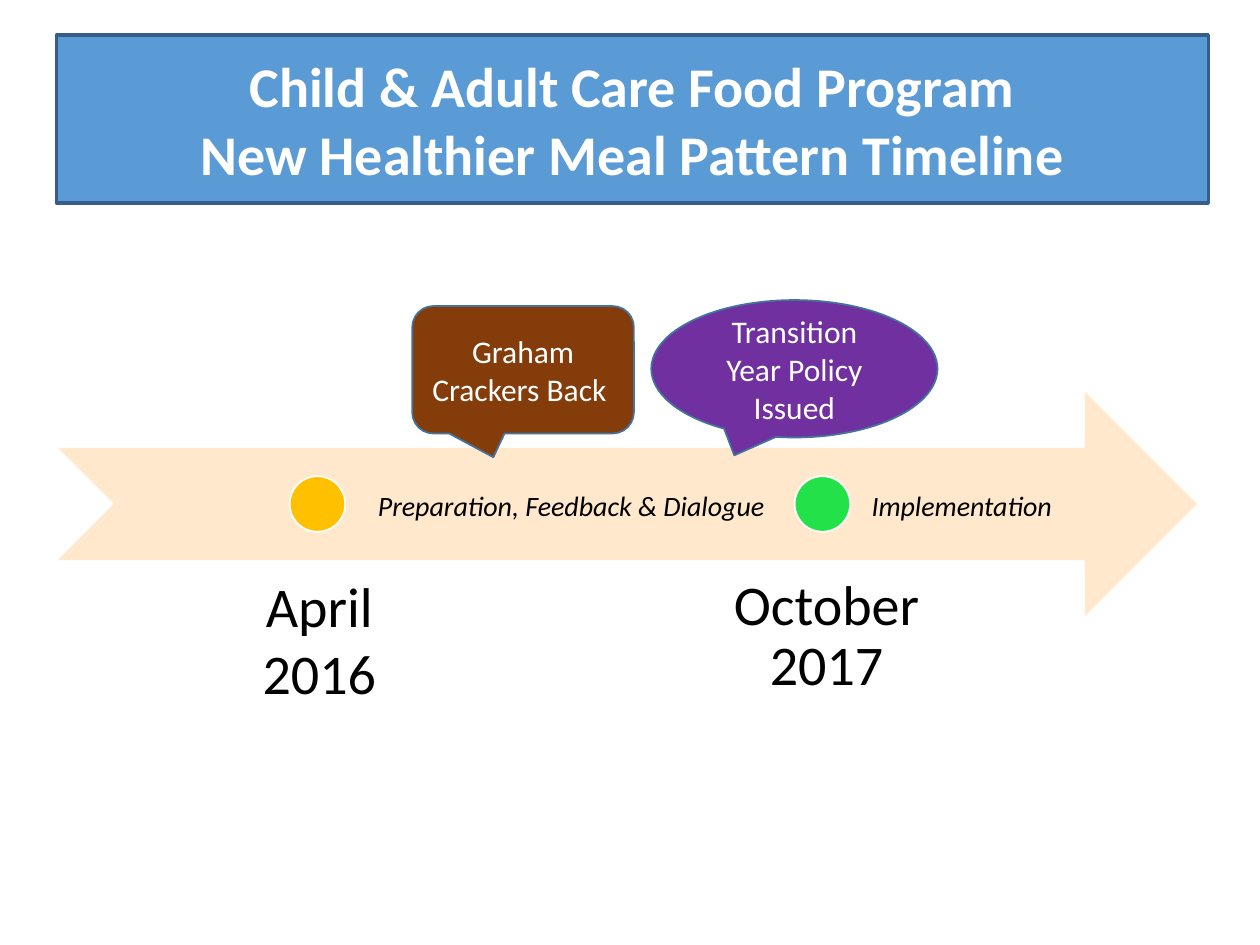
from dataclasses import dataclass

from pptx import Presentation
from pptx.dml.color import RGBColor as RGB
from pptx.enum.shapes import MSO_SHAPE as SHAPE
from pptx.enum.text import MSO_ANCHOR as ANCHOR, MSO_AUTO_SIZE as AUTO, PP_ALIGN as ALIGN
from pptx.util import Cm, Pt


@dataclass(frozen=True)
class Theme:
    """Colours, font and type sizes of the slide."""
    font: str = "Calibri"
    large: int = 32
    medium: int = 18
    small: int = 16
    white: str = "FFFFFF"
    black: str = "000000"
    banner: str = "5B9BD5"
    banner_line: str = "385D8A"
    arrow: str = "FFE8CC"
    start: str = "FFC000"
    launch: str = "23E148"
    crackers: str = "843C0B"
    policy: str = "7030A0"
    callout_line: str = "43739E"


THEME = Theme()


def write(sp, lines, size, color, align=ALIGN.CENTER, para=None, frame=None, **font):
    """Fill a shape with one formatted paragraph per line."""
    tf = sp.text_frame
    for name, value in {"word_wrap": True, **(frame or {})}.items():
        setattr(tf, name, value)
    for i, line in enumerate(lines):
        p = tf.paragraphs[0] if i == 0 else tf.add_paragraph()
        for name, value in {"alignment": align, **(para or {})}.items():
            setattr(p, name, value)
        r = p.add_run()
        r.text = line
        for name, value in {"name": THEME.font, "size": Pt(size), **font}.items():
            setattr(r.font, name, value)
        r.font.color.rgb = RGB.from_string(color)


def add_shape(s, kind, box, fill, line=None, width=1):
    """Add a flat preset shape with its box given in centimetres."""
    sp = s.shapes.add_shape(kind, *map(Cm, box))
    sp.shadow.inherit = False
    sp.fill.solid()
    sp.fill.fore_color.rgb = RGB.from_string(fill)
    if line:
        sp.line.color.rgb = RGB.from_string(line)
        sp.line.width = Pt(width)
    else:
        sp.line.fill.background()
    return sp


def add_label(s, box, lines, size, **options):
    """Add a black text box with its box given in centimetres."""
    write(s.shapes.add_textbox(*map(Cm, box)), lines, size, THEME.black, **options)


def add_banner(s, box):
    """Draw the title banner in the given box."""
    sp = add_shape(s, SHAPE.RECTANGLE, box, THEME.banner, THEME.banner_line, 2)
    write(sp, ["Child & Adult Care Food Program", "New Healthier Meal Pattern Timeline"],
          THEME.large, THEME.white, frame={"vertical_anchor": ANCHOR.MIDDLE}, bold=True)


def add_timeline(s, box):
    """Draw the arrow with its milestones, dates and phase names."""
    left, top, width, height = box
    add_shape(s, SHAPE.NOTCHED_RIGHT_ARROW, box, THEME.arrow)

    dot = 1.12
    for x, color in ((4.67, THEME.start), (14.85, THEME.launch)):
        add_shape(s, SHAPE.OVAL, (left + x, top + (height - dot) / 2, dot, dot),
                  color, THEME.white)

    for x, w, name in ((16.15, 4.34, "Implementation"),
                       (6.2, 8.41, "Preparation, Feedback & Dialogue")):
        add_label(s, (left + x, top + 1.83, w, 0.94), [name], THEME.small, align=ALIGN.LEFT,
                  frame={"word_wrap": False, "auto_size": AUTO.SHAPE_TO_FIT_TEXT}, italic=True)

    add_label(s, (left + 3.86, top + 3.5, 2.82, 3), ["April", "2016"], THEME.large,
              frame={"auto_size": AUTO.SHAPE_TO_FIT_TEXT})
    sides = ("left", "top", "right", "bottom")
    add_label(s, (left + 12.17, top + 3.1, 6.65, 4.52), ["October 2017"], THEME.large,
              para={"line_spacing": 0.9},
              frame={f"margin_{side}": Cm(0.63) for side in sides})


def add_callouts(s, box):
    """Draw the two event callouts side by side in the given box."""
    left, top, width, height = box
    events = (
        (SHAPE.ROUNDED_RECTANGULAR_CALLOUT, (left, top + 0.12, 4.47, 2.57),
         (-0.134, 0.686, 0.167), THEME.crackers, "Graham Crackers Back "),
        (SHAPE.OVAL_CALLOUT, (left + width - 5.77, top, 5.77, height),
         (-0.21, 0.63), THEME.policy, "Transition Year Policy Issued"),
    )
    for kind, place, tip, color, text in events:
        sp = add_shape(s, kind, place, color, THEME.callout_line)
        for i, value in enumerate(tip):
            sp.adjustments[i] = value
        write(sp, [text], THEME.medium, THEME.white, frame={"vertical_anchor": ANCHOR.MIDDLE})


def main():
    """Build the slide and save it."""
    prs = Presentation()
    prs.slide_width, prs.slide_height = Cm(25.4), Cm(19.05)
    s = prs.slides.add_slide(prs.slide_layouts[6])
    add_banner(s, (1.14, 0.71, 23.22, 3.38))
    add_timeline(s, (1.17, 7.9, 22.96, 4.52))
    add_callouts(s, (8.31, 6.05, 10.59, 2.77))
    prs.save("out.pptx")


if __name__ == "__main__":
    main()
